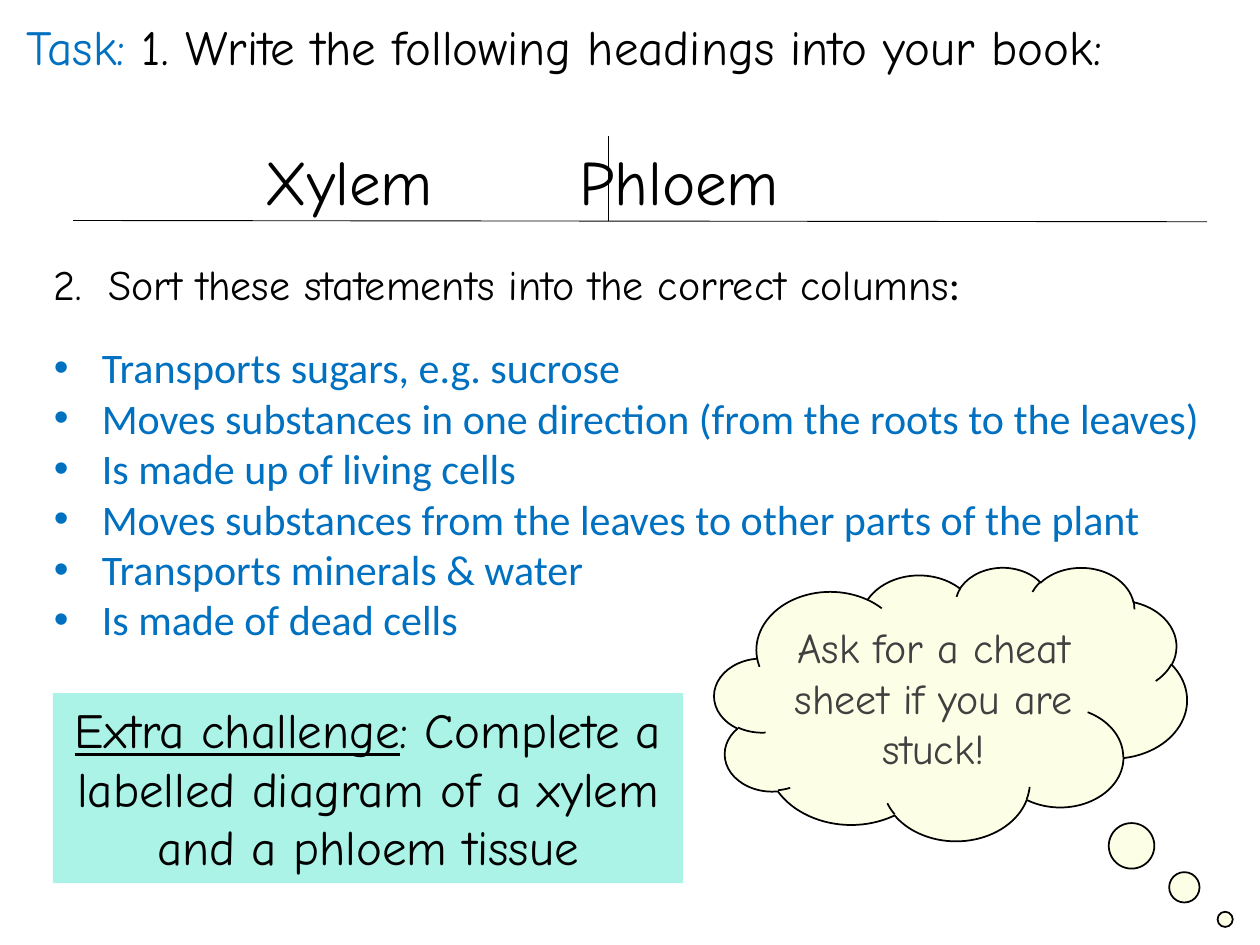
from dataclasses import dataclass

import lxml.etree
import pptx
import pptx.dml.color
import pptx.enum.shapes
import pptx.enum.text
import pptx.oxml.ns
import pptx.util

PX = 9144
HAND = "Comic Neue"
PLAIN = "Calibri"
COLORS = {
    "black": "000000",
    "blue": "0070C0",
    "grey": "404040",
    "mint": "ABF3E7",
    "cream": "FCFEE6",
}
ALIGN = pptx.enum.text.PP_ALIGN
ANCHOR = pptx.enum.text.MSO_ANCHOR
SHAPE = pptx.enum.shapes.MSO_SHAPE


@dataclass(frozen=True)
class Box:
    left: int
    top: int
    width: int
    height: int

    def emu(self) -> tuple:
        return tuple(px(n) for n in (self.left, self.top, self.width, self.height))


@dataclass(frozen=True)
class Run:
    text: str
    size: int
    color: str = "black"
    font: str = HAND
    underline: bool = False


@dataclass(frozen=True)
class Line:
    x1: int
    y1: int
    x2: int
    y2: int


@dataclass(frozen=True)
class Panel:
    kind: int
    box: Box
    fill: str
    runs: tuple
    anchor: int
    outline: str = ""
    adjustments: tuple = ()


TITLE_BOX = Box(11, 13, 989, 476)
TITLE = (
    Run("Task: ", 28, "blue"),
    Run("1. Write the following headings into your book:", 28),
)
STATEMENTS_BOX = Box(33, 200, 936, 320)
INSTRUCTION = (
    Run("2.\tSort these statements into the correct columns", 24),
    Run(":", 24, font=PLAIN),
)
STATEMENTS = (
    "Transports sugars, e.g. sucrose",
    "Moves substances in one direction (from the roots to the leaves)",
    "Is made up of living cells",
    "Moves substances from the leaves to other parts of the plant",
    "Transports minerals & water",
    "Is made of dead cells",
)
HEADINGS_BOX = Box(200, 108, 587, 71)
HEADINGS = (Run("Xylem\tPhloem", 36),)
LINES = (Line(58, 175, 958, 176), Line(483, 175, 483, 108))
PANELS = (
    Panel(
        SHAPE.RECTANGLE, Box(42, 550, 500, 151), "mint",
        (
            Run("Extra challenge", 28, underline=True),
            Run(": Complete a labelled diagram of a xylem and a phloem tissue", 28),
        ),
        ANCHOR.TOP,
    ),
    Panel(
        SHAPE.CLOUD_CALLOUT, Box(567, 450, 375, 217), "cream",
        (Run("Ask for a cheat sheet if you are stuck!", 24, "grey"),),
        ANCHOR.MIDDLE, "black", (0.581, 0.789),
    ),
)


def px(length: int) -> int:
    return pptx.util.Emu(length * PX)


def rgb(name: str) -> pptx.dml.color.RGBColor:
    return pptx.dml.color.RGBColor.from_string(COLORS[name])


def add_runs(paragraph, runs: tuple) -> None:
    for item in runs:
        run = paragraph.add_run()
        run.text = item.text
        run.font.name = item.font
        run.font.size = pptx.util.Pt(item.size)
        run.font.color.rgb = rgb(item.color)
        run.font.underline = item.underline


def hang(paragraph, indent: int) -> None:
    properties = paragraph._p.get_or_add_pPr()
    properties.set("marL", str(px(indent)))
    properties.set("indent", str(-px(indent)))


def add_child(parent, tag: str, **attributes: str):
    child = lxml.etree.SubElement(parent, pptx.oxml.ns.qn(tag))
    for name, value in attributes.items():
        child.set(name, value)
    return child


def add_text_box(slide, box: Box):
    frame = slide.shapes.add_textbox(*box.emu()).text_frame
    frame.word_wrap = True
    return frame


def fill_title(slide) -> None:
    title = slide.shapes.title
    title.left, title.top, title.width, title.height = TITLE_BOX.emu()
    frame = title.text_frame
    frame.auto_size = pptx.enum.text.MSO_AUTO_SIZE.NONE
    frame.vertical_anchor = ANCHOR.TOP
    paragraph = frame.paragraphs[0]
    paragraph.alignment = ALIGN.LEFT
    paragraph.line_spacing = 0.9
    add_runs(paragraph, TITLE)


def add_line(slide, line: Line) -> None:
    connector = slide.shapes.add_connector(
        pptx.enum.shapes.MSO_CONNECTOR.STRAIGHT,
        px(line.x1), px(line.y1), px(line.x2), px(line.y2),
    )
    connector.line.color.rgb = rgb("black")
    connector.line.width = pptx.util.Pt(0.5)
    add_child(connector._element.spPr, "a:effectLst")


def add_statements(slide) -> None:
    frame = add_text_box(slide, STATEMENTS_BOX)
    instruction = frame.paragraphs[0]
    hang(instruction, 43)
    add_runs(instruction, INSTRUCTION)
    for index, statement in enumerate(STATEMENTS):
        paragraph = frame.add_paragraph()
        paragraph.space_before = pptx.util.Pt(0 if index else 19)
        hang(paragraph, 38)
        properties = paragraph._p.get_or_add_pPr()
        add_child(properties, "a:buFont", typeface="Arial")
        add_child(properties, "a:buChar", char="•")
        add_runs(paragraph, (Run(statement, 24, "blue", PLAIN),))


def add_headings(slide) -> None:
    paragraph = add_text_box(slide, HEADINGS_BOX).paragraphs[0]
    stops = add_child(paragraph._p.get_or_add_pPr(), "a:tabLst")
    add_child(stops, "a:tab", pos=str(px(250)), algn="l")
    add_runs(paragraph, HEADINGS)


def add_panel(slide, panel: Panel) -> None:
    shape = slide.shapes.add_shape(panel.kind, *panel.box.emu())
    shape.shadow.inherit = False
    for index, value in enumerate(panel.adjustments):
        shape.adjustments[index] = value
    shape.fill.solid()
    shape.fill.fore_color.rgb = rgb(panel.fill)
    if panel.outline:
        shape.line.color.rgb = rgb(panel.outline)
        shape.line.width = pptx.util.Pt(1)
    else:
        shape.line.fill.background()
    frame = shape.text_frame
    frame.word_wrap = True
    frame.vertical_anchor = panel.anchor
    frame.paragraphs[0].alignment = ALIGN.CENTER
    add_runs(frame.paragraphs[0], panel.runs)


def main() -> None:
    presentation = pptx.Presentation()
    presentation.slide_width = px(1000)
    presentation.slide_height = px(750)
    slide = presentation.slides.add_slide(presentation.slide_layouts[5])
    fill_title(slide)
    add_statements(slide)
    for line in LINES:
        add_line(slide, line)
    add_headings(slide)
    for panel in PANELS:
        add_panel(slide, panel)
    presentation.save("out.pptx")


if __name__ == "__main__":
    main()
